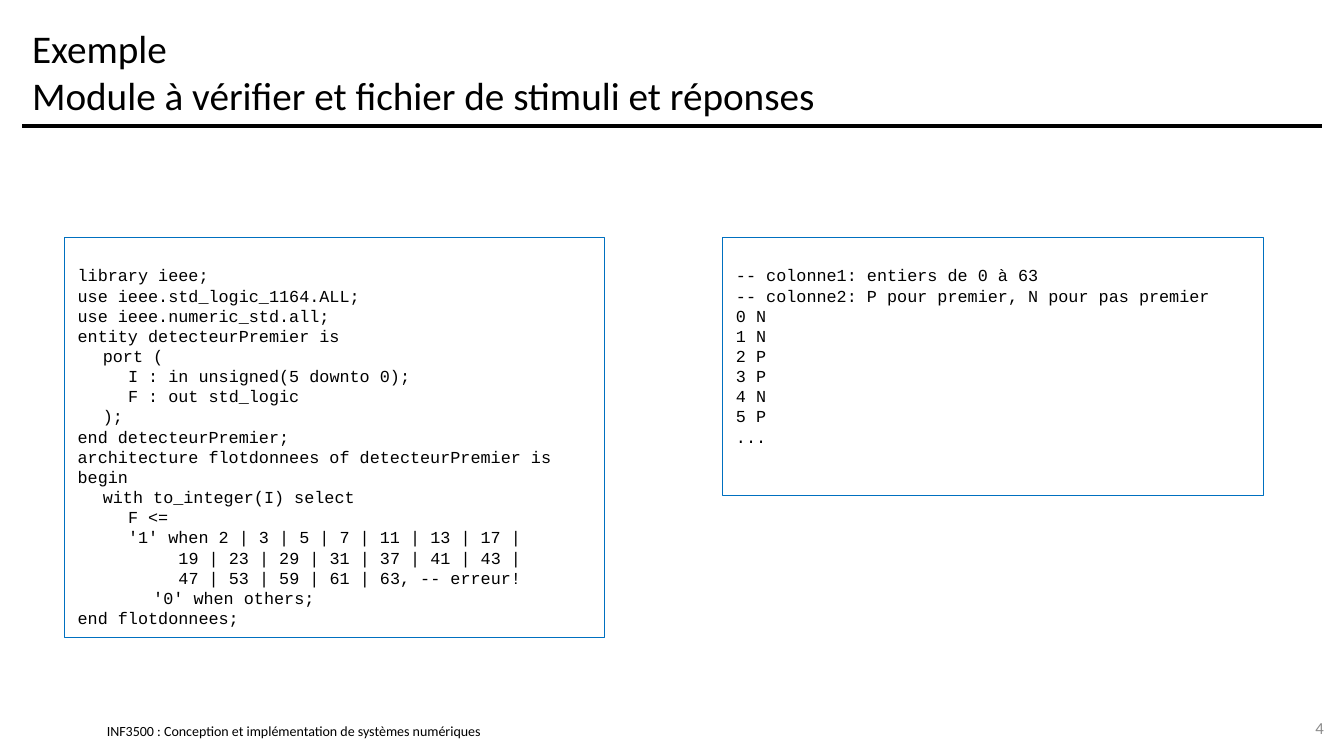
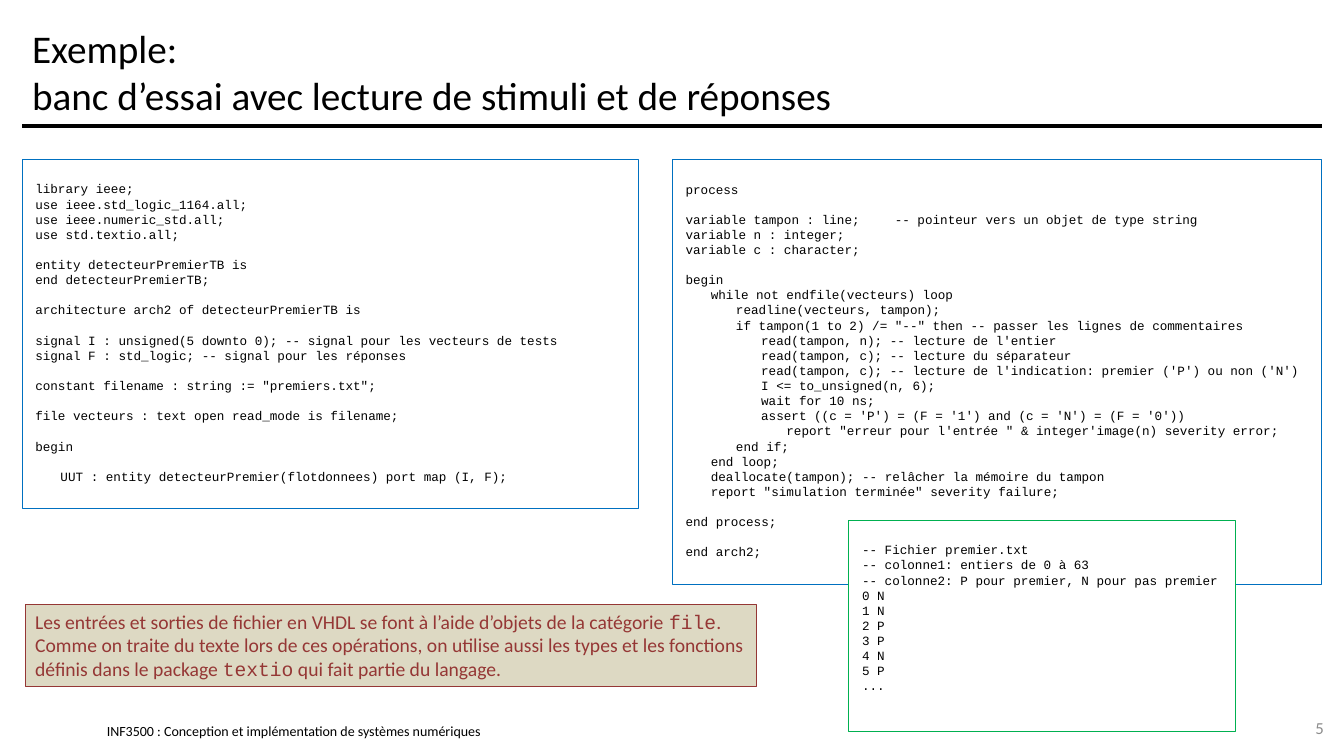
import pptx
import pptx.util
import pptx.dml.color
import pptx.enum.shapes
import pptx.enum.text
import pptx.oxml.ns
import lxml.etree

SCALE = 9144
HUES = {"ink": "000000", "paper": "FFFFFF", "blue": "0070C0", "green": "00B050",
        "sand": "DDD9C3", "brick": "953735", "grey": "8C8C8C"}
SANS, MONO = "Calibri", "Courier New"
ALIGN = pptx.enum.text.PP_ALIGN
ANCHOR = pptx.enum.text.MSO_ANCHOR
FOOTER = "INF3500 : Conception et implémentation de systèmes numériques"

MODULE = """library ieee;
use ieee.std_logic_1164.ALL;
use ieee.numeric_std.all;
entity detecteurPremier is
\tport (
\t\tI : in unsigned(5 downto 0);
\t\tF : out std_logic
\t);
end detecteurPremier;
architecture flotdonnees of detecteurPremier is
begin
\twith to_integer(I) select
\t\tF <=
\t\t'1' when 2 | 3 | 5 | 7 | 11 | 13 | 17 |
\t\t\t\t19 | 23 | 29 | 31 | 37 | 41 | 43 |
\t\t\t\t47 | 53 | 59 | 61 | 63, -- erreur!
\t\t\t'0' when others;
end flotdonnees;"""

DATA = """-- colonne1: entiers de 0 à 63
-- colonne2: P pour premier, N pour pas premier
0 N
1 N
2 P
3 P
4 N
5 P
..."""

BENCH = """library ieee;
use ieee.std_logic_1164.all;
use ieee.numeric_std.all;
use std.textio.all;

entity detecteurPremierTB is
end detecteurPremierTB;

architecture arch2 of detecteurPremierTB is

signal I : unsigned(5 downto 0); -- signal pour les vecteurs de tests
signal F : std_logic; -- signal pour les réponses

constant filename : string := "premiers.txt";

file vecteurs : text open read_mode is filename;

begin

\tUUT : entity detecteurPremier(flotdonnees) port map (I, F);"""

PROCESS = """process

variable tampon : line;\t -- pointeur vers un objet de type string
variable n : integer;
variable c : character;

begin
\twhile not endfile(vecteurs) loop
\t\treadline(vecteurs, tampon);
\t\tif tampon(1 to 2) /= "--" then -- passer les lignes de commentaires
\t\t\tread(tampon, n); -- lecture de l'entier
\t\t\tread(tampon, c); -- lecture du séparateur
\t\t\tread(tampon, c); -- lecture de l'indication: premier ('P') ou non ('N')
\t\t\tI <= to_unsigned(n, 6);
\t\t\twait for 10 ns;
\t\t\tassert ((c = 'P') = (F = '1') and (c = 'N') = (F = '0'))
\t\t\t\treport "erreur pour l'entrée " & integer'image(n) severity error;
\t\tend if;
\tend loop;
\tdeallocate(tampon); -- relâcher la mémoire du tampon
\treport "simulation terminée" severity failure;

end process;

end arch2;"""

NOTE = [
    ["Les entrées et sorties de fichier en VHDL se font à l’aide d’objets de la catégorie ",
     "file", "."],
    ["Comme on traite du texte lors de ces opérations, on utilise aussi les types et les "
     "fonctions définis dans le package ", "textio", " qui fait partie du langage."],
]


def px(count):
    return pptx.util.Emu(count * SCALE)


def rgb(hue):
    return pptx.dml.color.RGBColor.from_string(HUES[hue])


def style(run, size, hue="ink", face=SANS):
    run.font.size = pptx.util.Pt(size)
    run.font.name = face
    run.font.color.rgb = rgb(hue)


def inset(frame, side, top, base):
    frame.word_wrap = True
    frame.margin_left = frame.margin_right = px(side)
    frame.margin_top, frame.margin_bottom = px(top), px(base)


def label(slide, box, text, size, hue="ink", align=ALIGN.LEFT, pad=(10, 5)):
    frame = slide.shapes.add_textbox(*map(px, box)).text_frame
    inset(frame, pad[0], pad[1], pad[1])
    frame.vertical_anchor = ANCHOR.MIDDLE
    frame.text = text
    for para in frame.paragraphs:
        para.alignment = align
        for run in para.runs:
            style(run, size, hue)


def panel(slide, box, edge, fill=None):
    shape = slide.shapes.add_shape(pptx.enum.shapes.MSO_SHAPE.RECTANGLE, *map(px, box))
    shape.shadow.inherit = False
    shape.line.color.rgb = rgb(edge)
    shape.line.width = pptx.util.Pt(0.75)
    if fill:
        shape.fill.solid()
        shape.fill.fore_color.rgb = rgb(fill)
    else:
        shape.fill.background()
    shape.text_frame.vertical_anchor = ANCHOR.TOP
    return shape.text_frame


def stops(para):
    name = pptx.oxml.ns.qn
    tabs = lxml.etree.SubElement(para._p.get_or_add_pPr(), name("a:tabLst"))
    for step in range(1, 6):
        lxml.etree.SubElement(tabs, name("a:tab"), pos=str(px(25 * step)), algn="l")


def code(slide, box, text, size, edge="blue", fill=None):
    frame = panel(slide, box, edge, fill)
    pitch = size * 5 // 3
    inset(frame, 13, 7 + pitch, 7)
    blocks = [block.split("\n") for block in text.split("\n\n")]
    frame.text = "\n".join(line for block in blocks for line in block)
    heads, count = set(), 0
    for block in blocks:
        heads.add(count)
        count += len(block)
    for index, para in enumerate(frame.paragraphs):
        stops(para)
        para.alignment = ALIGN.JUSTIFY
        para.line_spacing = px(pitch)
        if index and index in heads:
            para.space_before = px(pitch)
        for run in para.runs:
            style(run, size, face=MONO)


def note(slide, box, lines):
    frame = panel(slide, box, "brick", "sand")
    inset(frame, 10, 5, 5)
    for index, parts in enumerate(lines):
        para = frame.add_paragraph() if index else frame.paragraphs[0]
        para.alignment = ALIGN.LEFT
        for spot, part in enumerate(parts):
            run = para.add_run()
            run.text = part
            style(run, 14, "brick", MONO if spot % 2 else SANS)


def rule(slide, left, top, width):
    line = slide.shapes.add_connector(pptx.enum.shapes.MSO_CONNECTOR.STRAIGHT,
                                      px(left), px(top), px(left + width), px(top))
    line.line.color.rgb = rgb("ink")
    line.line.width = pptx.util.Pt(3)
    lxml.etree.SubElement(line._element.spPr, pptx.oxml.ns.qn("a:effectLst"))


def page(deck, title, number):
    slide = deck.slides.add_slide(deck.slide_layouts[6])
    label(slide, (106, 717, 511, 17), FOOTER, 10, pad=(0, 0))
    rule(slide, 22, 125, 1289)
    label(slide, (22, 17, 1289, 108), title, 28)
    label(slide, (1256, 702, 67, 40), str(number), 12, "grey", ALIGN.RIGHT)
    return slide


def sample(deck):
    slide = page(deck, "Exemple\nModule à vérifier et fichier de stimuli et réponses", 4)
    code(slide, (64, 236, 536, 397), MODULE, 12)
    code(slide, (717, 236, 536, 256), DATA, 12)


def bench(deck):
    slide = page(deck, "Exemple:\nbanc d’essai avec lecture de stimuli et de réponses", 5)
    code(slide, (22, 158, 611, 347), BENCH, 9)
    code(slide, (667, 158, 644, 422), PROCESS, 9)
    code(slide, (842, 516, 383, 210), "-- Fichier premier.txt\n" + DATA, 9, "green", "paper")
    note(slide, (25, 600, 725, 81), NOTE)


def main():
    deck = pptx.Presentation()
    deck.slide_width, deck.slide_height = px(1333), px(750)
    sample(deck)
    bench(deck)
    deck.save("out.pptx")


if __name__ == "__main__":
    main()
